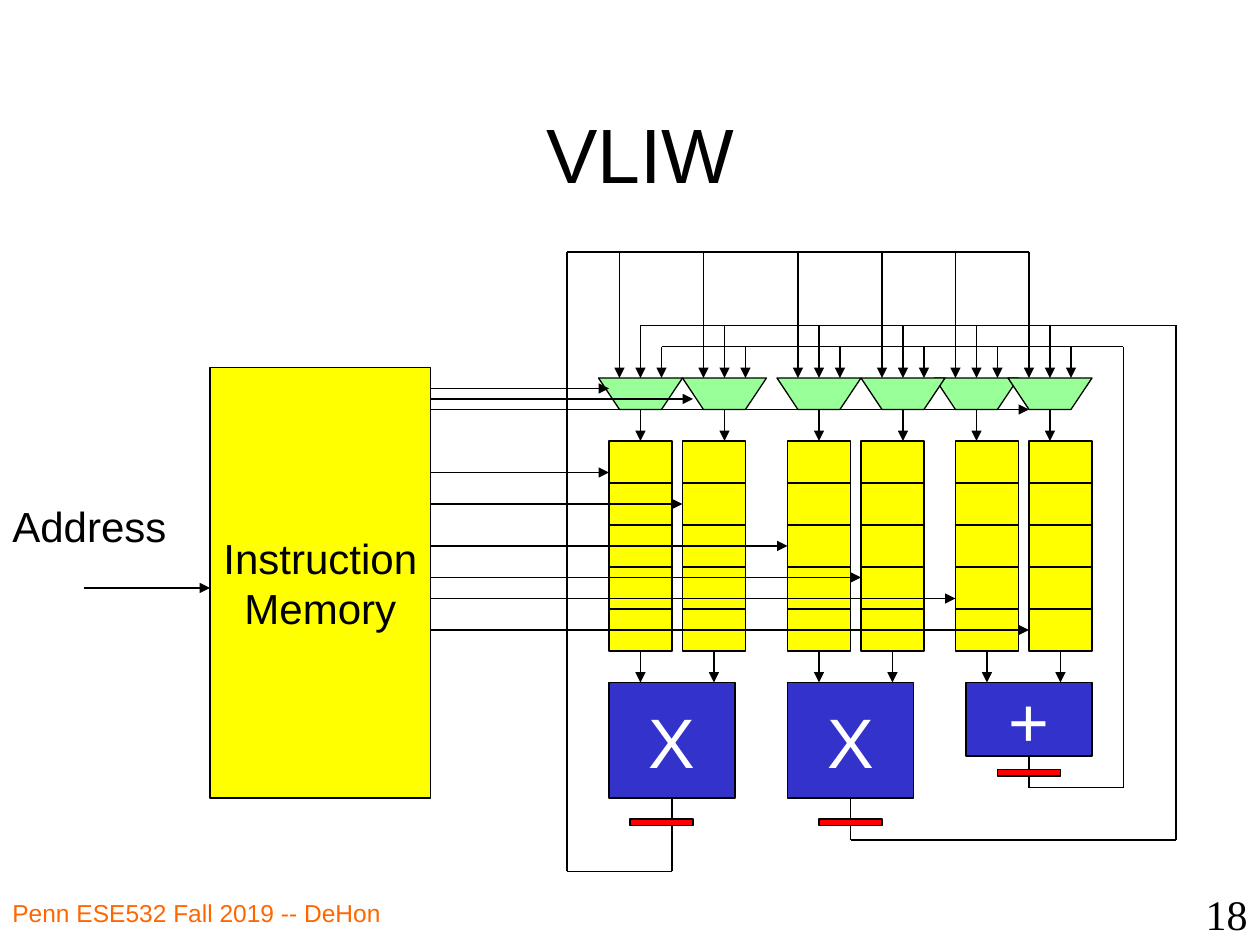
from lxml.etree import SubElement
from pptx import Presentation
from pptx.dml.color import RGBColor
from pptx.enum.shapes import MSO_CONNECTOR as Connector, MSO_SHAPE as Shape
from pptx.enum.text import MSO_ANCHOR as Anchor, PP_ALIGN as Align
from pptx.oxml.ns import qn
from pptx.util import Cm, Pt

BLACK = RGBColor(0x00, 0x00, 0x00)
WHITE = RGBColor(0xFF, 0xFF, 0xFF)
YELLOW = RGBColor(0xFF, 0xFF, 0x00)
BLUE = RGBColor(0x33, 0x33, 0xCC)
GREEN = RGBColor(0x99, 0xFF, 0x99)
RED = RGBColor(0xFF, 0x00, 0x00)
ORANGE = RGBColor(0xFF, 0x66, 0x00)

STEP = 2.54 / 12  # drawing grid in cm; the diagram is laid out in grid steps
LINE_WIDTH = Pt(0.75)

deck = Presentation()
deck.slide_width, deck.slide_height = Cm(25.4), Cm(19.05)
page = deck.slides.add_slide(deck.slide_layouts[5])
sites = {}  # grid point -> (block, connection site)


def write(shape, text, size=24, color=BLACK, font="Arial", align=Align.LEFT,
          anchor=Anchor.TOP, wrap=True):
    frame = shape.text_frame
    frame.word_wrap = wrap
    frame.vertical_anchor = anchor
    frame.text = text
    for para in frame.paragraphs:
        para.alignment = align
        for span in para.runs:
            span.font.name = font
            span.font.size = Pt(size)
            span.font.color.rgb = color


def wire(start, end, arrow=False):
    """Draw a line between grid points, joined to any block side centred there."""
    line = page.shapes.add_connector(
        Connector.STRAIGHT, *[Cm(n * STEP) for n in (*start, *end)])
    line.line.color.rgb = BLACK
    line.line.width = LINE_WIDTH
    if start in sites:
        line.begin_connect(*sites[start])
    if end in sites:
        line.end_connect(*sites[end])
    properties = line.element.spPr
    if arrow:
        SubElement(properties.find(qn("a:ln")), qn("a:tailEnd"), type="triangle")
    SubElement(properties, qn("a:effectLst"))


# Title and plain text
title = page.shapes.title
title.left, title.top, title.width, title.height = Cm(2.12), Cm(1.48), Cm(21.59), Cm(3.18)
write(title, "VLIW", size=44, align=Align.CENTER, anchor=Anchor.MIDDLE)

for left, top, width, height, text, style in [
    (0, 17.98, 9.73, 1.07, "Penn ESE532 Fall 2019 -- DeHon", dict(size=14, color=ORANGE)),
    (20.12, 17.78, 5.28, 1.27, "18", dict(font="Times New Roman", align=Align.RIGHT)),
    (0, 9.96, 3.63, 1.27, "Address", dict(wrap=False)),
]:
    box = page.shapes.add_textbox(Cm(left), Cm(top), Cm(width), Cm(height))
    write(box, text, **style)

# Blocks: memory, operators, register files and output registers
register_lefts = [58, 65, 75, 82, 91, 98]
blocks = [
    (20, 35, 21, 41, YELLOW, "Instruction\nMemory", 24, BLACK),
    (58, 65, 12, 11, BLUE, "X", 40, WHITE),
    (75, 65, 12, 11, BLUE, "X", 40, WHITE),
    (92, 65, 12, 7, BLUE, "+", 40, WHITE),
]
blocks += [(left, 42 + 4 * row, 6, 4, YELLOW, "", 0, BLACK)
           for left in register_lefts for row in range(5)]
blocks += [(left, top, 6, 0.6, RED, "", 0, BLACK)
           for left, top in [(60, 78), (78, 78), (95, 73.3)]]

output_registers = []
for left, top, width, height, fill, text, size, color in blocks:
    block = page.shapes.add_shape(
        Shape.RECTANGLE, *[Cm(n * STEP) for n in (left, top, width, height)])
    block.shadow.inherit = False
    block.fill.solid()
    block.fill.fore_color.rgb = fill
    block.line.color.rgb = BLACK
    block.line.width = LINE_WIDTH
    if text:
        write(block, text, size=size, color=color, align=Align.CENTER,
              anchor=Anchor.MIDDLE, wrap=False)
    if fill == RED:
        output_registers.append(block)
    middle, center = left + width / 2, top + height / 2
    for site, point in enumerate([(middle, top), (left, center),
                                  (middle, top + height), (left + width, center)]):
        sites[point] = (block, site)

# Multiplexers with their three inputs and one output
for left in [89, 96, 74, 82, 57, 65]:
    corners = [(Cm(x * STEP), Cm(y * STEP)) for x, y in
               [(left, 36), (left + 2, 39), (left + 6, 39), (left + 8, 36)]]
    builder = page.shapes.build_freeform(*corners[0], scale=1.0)
    builder.add_line_segments(corners[1:], close=True)
    mux = builder.convert_to_shape()
    mux.shadow.inherit = False
    mux.fill.solid()
    mux.fill.fore_color.rgb = GREEN
    mux.line.color.rgb = BLACK
    mux.line.width = LINE_WIDTH
    for offset, bus in [(2, 24), (4, 31), (6, 33)]:
        wire((left + offset, bus), (left + offset, 36), arrow=True)
    wire((left + 4, 39), (left + 4, 42), arrow=True)

# Register files feed the operators
for left in register_lefts:
    wire((left + 3, 62), (left + 3, 65), arrow=True)

# Results return to the multiplexer buses
for route in [
    [(64, 76), (64, 83), (54, 83), (54, 24), (77, 24)],
    [(81, 76), (81, 80), (112, 80), (112, 31), (78, 31)],
    [(98, 72), (98, 75), (107, 75), (107, 33), (80, 33)],
    [(76, 24), (98, 24)],
    [(79, 31), (61, 31)],
    [(81, 33), (63, 33)],
]:
    for start, end in zip(route, route[1:]):
        wire(start, end)

# Address input and control lines from the instruction memory
wire((8, 56), (20, 56), arrow=True)
mux_controls = [(58, 37), (66, 38), (98, 39)]
register_controls = list(zip(register_lefts, [45, 48, 52, 55, 57, 60]))
for x, y in mux_controls + register_controls:
    wire((41, y), (x, y), arrow=True)

# Output registers sit in front of the result wires
for register in output_registers:
    register.element.getparent().append(register.element)

deck.save("out.pptx")
